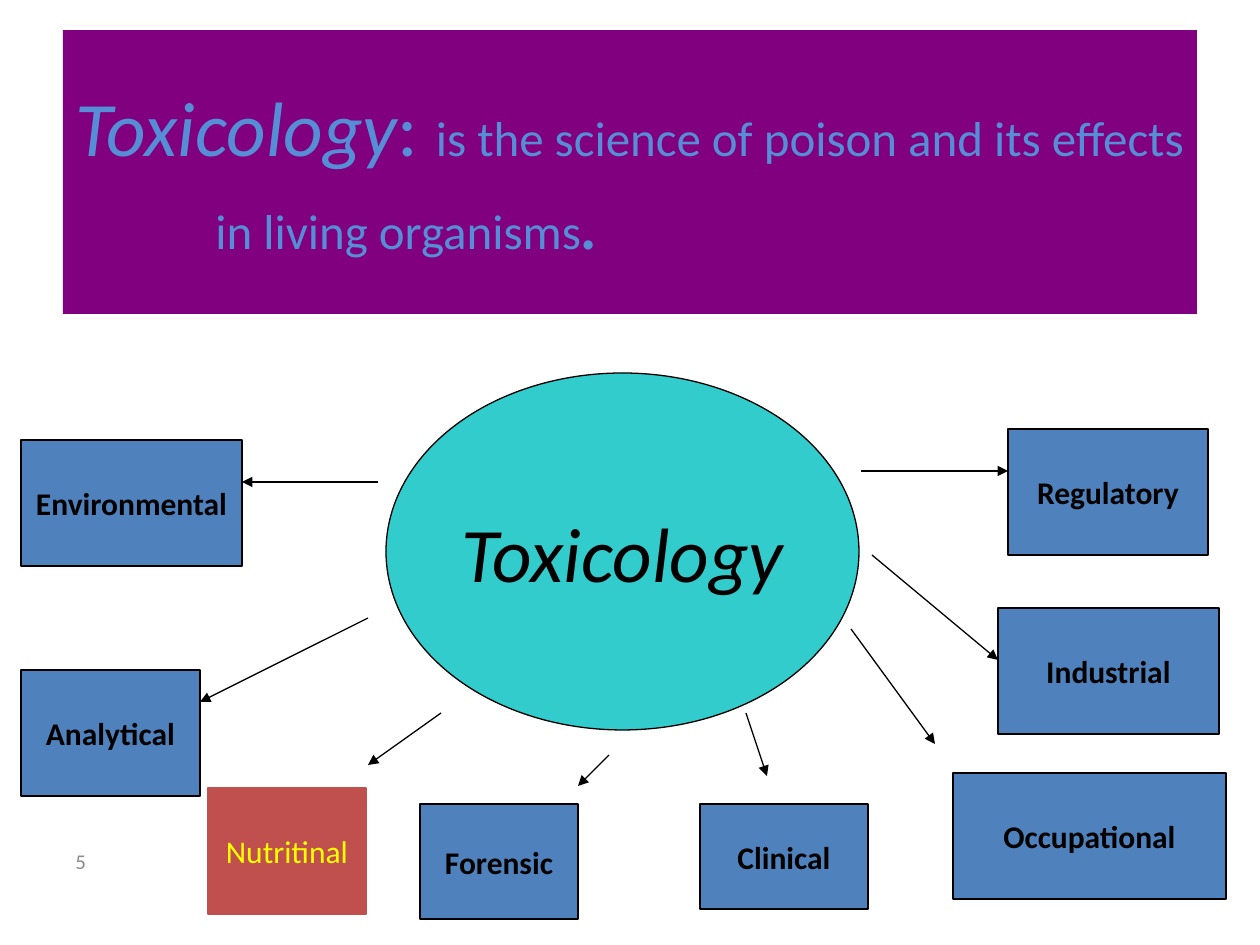
from pptx import Presentation
from pptx.dml.color import RGBColor
from pptx.enum.shapes import MSO_CONNECTOR, MSO_SHAPE
from pptx.enum.text import MSO_ANCHOR, PP_ALIGN
from pptx.oxml.ns import qn
from pptx.util import Pt
from lxml import etree

RECT, OVAL = MSO_SHAPE.RECTANGLE, MSO_SHAPE.OVAL
LINE = MSO_CONNECTOR.STRAIGHT
MID = MSO_ANCHOR.MIDDLE
LEFT, CENTER = PP_ALIGN.LEFT, PP_ALIGN.CENTER
SCALE = 914400 / 126
FONT = "Calibri"
BLACK, BLUE, RED, YELLOW = "000000", "4F81BD", "C0504D", "FFFF00"
SKY = "558ED5"

FIELDS = [
    ("Environmental", 21, 440, 221, 126),
    ("Analytical", 21, 670, 179, 126),
    ("Forensic", 420, 804, 158, 115),
    ("Clinical", 700, 804, 168, 105),
    ("Occupational", 953, 773, 273, 126),
    ("Industrial", 998, 608, 221, 126),
    ("Regulatory", 1008, 429, 200, 126),
]
ARROWS = [
    (378, 482, 242, 482),
    (368, 618, 200, 702),
    (441, 713, 368, 765),
    (609, 755, 578, 786),
    (746, 713, 767, 776),
    (851, 629, 935, 744),
    (872, 555, 998, 660),
    (861, 471, 1008, 471),
]


def px(n):
    return round(n * SCALE)


def color(code):
    return RGBColor.from_string(code)


def add_run(para, text, size, code, bold=False, italic=False):
    run = para.add_run()
    run.text = text
    font = run.font
    font.name, font.size = FONT, Pt(size)
    font.bold, font.italic = bold, italic
    font.color.rgb = color(code)


def add_shape(slide, kind, box, fill, edge=None):
    shape = slide.shapes.add_shape(kind, *map(px, box))
    shape.shadow.inherit = False
    shape.fill.solid()
    shape.fill.fore_color.rgb = color(fill)
    if edge:
        shape.line.color.rgb = color(edge)
        shape.line.width = Pt(0.75)
    else:
        shape.line.fill.background()
    shape.text_frame.vertical_anchor = MID
    return shape


def add_node(slide, text, box, fill, edge=BLACK, size=18, code=BLACK,
             kind=RECT, bold=True, italic=False):
    frame = add_shape(slide, kind, box, fill, edge).text_frame
    frame.word_wrap = False
    para = frame.paragraphs[0]
    para.alignment = CENTER
    add_run(para, text, size, code, bold, italic)


def add_arrow(slide, ends):
    arrow = slide.shapes.add_connector(LINE, *map(px, ends))
    arrow.line.color.rgb = color(BLACK)
    arrow.line.width = Pt(0.75)
    etree.SubElement(arrow.line._get_or_add_ln(), qn("a:tailEnd"), type="triangle")
    etree.SubElement(arrow._element.spPr, qn("a:effectLst"))


def add_title(slide):
    frame = add_shape(slide, RECT, (63, 30, 1134, 284), "800080").text_frame
    frame.word_wrap = True
    frame.margin_right = px(4)
    para = frame.paragraphs[0]
    para.alignment = LEFT
    props = para._p.get_or_add_pPr()
    props.set("marL", str(px(140)))
    props.set("indent", str(px(-140)))
    add_run(para, "Toxicology", 44, SKY, italic=True)
    add_run(para, ": ", 44, SKY)
    add_run(para, "is the science of poison and its effects in living organisms", 28, SKY)
    add_run(para, ".", 44, SKY, italic=True)


def add_number(slide):
    box = slide.shapes.add_textbox(*map(px, (63, 828, 294, 66)))
    frame = box.text_frame
    frame.word_wrap = True
    frame.vertical_anchor = MID
    add_run(frame.paragraphs[0], "5", 12, "8C8C8C")


def main():
    deck = Presentation()
    deck.slide_width, deck.slide_height = px(1260), px(945)
    slide = deck.slides.add_slide(deck.slide_layouts[6])
    add_number(slide)
    add_title(slide)
    add_node(slide, "Toxicology", (386, 373, 473, 357), "33CCCC",
             size=44, kind=OVAL, bold=False, italic=True)
    for text, *box in FIELDS:
        add_node(slide, text, box, BLUE)
    add_node(slide, "Nutritinal", (208, 788, 158, 126), RED,
             edge=RED, code=YELLOW, bold=False)
    for ends in ARROWS:
        add_arrow(slide, ends)
    deck.save("out.pptx")


if __name__ == "__main__":
    main()
